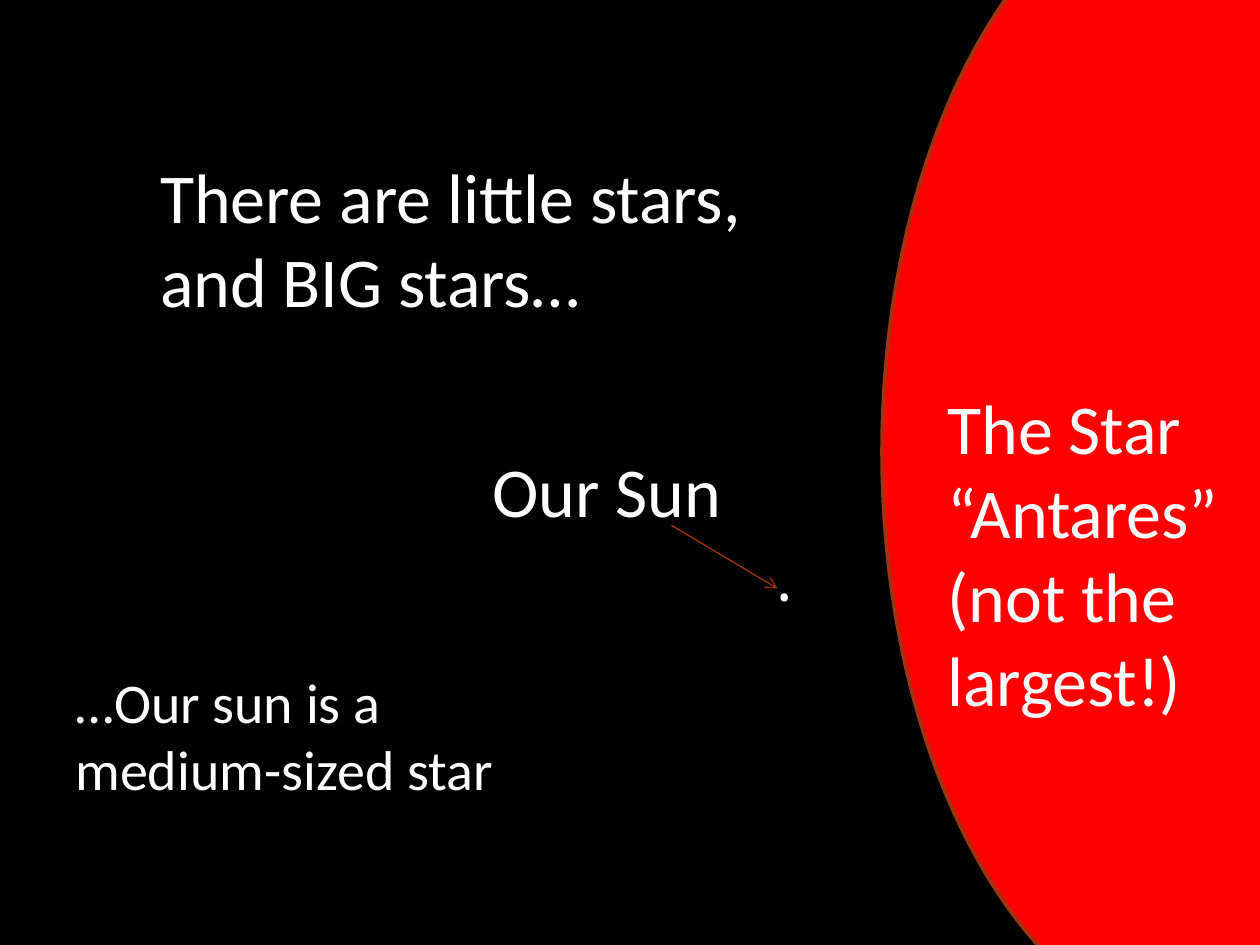
from dataclasses import dataclass

from lxml.etree import SubElement
from pptx import Presentation
from pptx.dml.color import RGBColor
from pptx.enum.shapes import MSO_CONNECTOR, MSO_SHAPE
from pptx.enum.text import MSO_ANCHOR, MSO_AUTO_SIZE, PP_ALIGN
from pptx.oxml.ns import qn
from pptx.util import Inches, Pt


@dataclass(frozen=True)
class Theme:
    sky: RGBColor = RGBColor(0x00, 0x00, 0x00)
    star: RGBColor = RGBColor(0xFF, 0x00, 0x00)
    rim: RGBColor = RGBColor(0x9C, 0x35, 0x11)
    arrow: RGBColor = RGBColor(0xA0, 0x31, 0x0A)
    text: RGBColor = RGBColor(0xFF, 0xFF, 0xFF)
    font: str = "Calibri"
    dot_font: str = "Cambria"
    large: int = 40
    small: int = 32


THEME = Theme()


def fill_text(shape, lines, size=THEME.large, font=THEME.font):
    frame = shape.text_frame
    frame.text = "\n".join(lines)
    frame.word_wrap = True
    frame.auto_size = MSO_AUTO_SIZE.NONE
    frame.vertical_anchor = MSO_ANCHOR.TOP
    for para in frame.paragraphs:
        para.alignment = PP_ALIGN.LEFT
        for run in para.runs:
            run.font.size = Pt(size)
            run.font.name = font
            run.font.color.rgb = THEME.text


def set_title(slide, box, text):
    title = slide.shapes.title
    title.left, title.top, title.width, title.height = map(Inches, box)
    fill_text(title, [text])


def add_label(slide, box, *lines, **style):
    label = slide.shapes.add_textbox(*map(Inches, box))
    fill_text(label, lines, **style)


def add_star(slide, box):
    star = slide.shapes.add_shape(MSO_SHAPE.OVAL, *map(Inches, box))
    star.shadow.inherit = False
    star.fill.solid()
    star.fill.fore_color.rgb = THEME.star
    star.line.color.rgb = THEME.rim
    star.line.width = Pt(2)


def add_arrow(slide, start, end):
    arrow = slide.shapes.add_connector(
        MSO_CONNECTOR.STRAIGHT, *map(Inches, start + end))
    arrow.line.color.rgb = THEME.arrow
    arrow.line.width = Pt(0.75)
    # Open arrowhead, no shadow
    SubElement(arrow.line._get_or_add_ln(), qn("a:tailEnd"), type="arrow")
    SubElement(arrow._element.spPr, qn("a:effectLst"))


def main():
    deck = Presentation()
    deck.slide_width, deck.slide_height = Inches(10), Inches(7.5)
    slide = deck.slides.add_slide(deck.slide_layouts[5])
    slide.background.fill.solid()
    slide.background.fill.fore_color.rgb = THEME.sky

    # Giant star and its name
    add_star(slide, (7, -1.08, 5.42, 9.33))
    add_label(slide, (7.42, 3, 4.25, 2.79),
              "The Star", "“Antares”", "(not the", "largest!)")

    # Sun: name, arrow and a dot to scale
    add_label(slide, (3.81, 3.5, 2.5, 0.77), "Our Sun")
    add_arrow(slide, (5.33, 4.17), (6.17, 4.67))
    add_label(slide, (6.07, 4.17, 0.5, 0.77), ".", font=THEME.dot_font)

    # Opening and closing statements
    set_title(slide, (1.17, 1.17, 5, 1.45),
              "There are little stars, and BIG stars…")
    add_label(slide, (0.5, 5.25, 3.92, 1.18),
              "…Our sun is a medium-sized star", size=THEME.small)

    deck.save("out.pptx")


if __name__ == "__main__":
    main()
